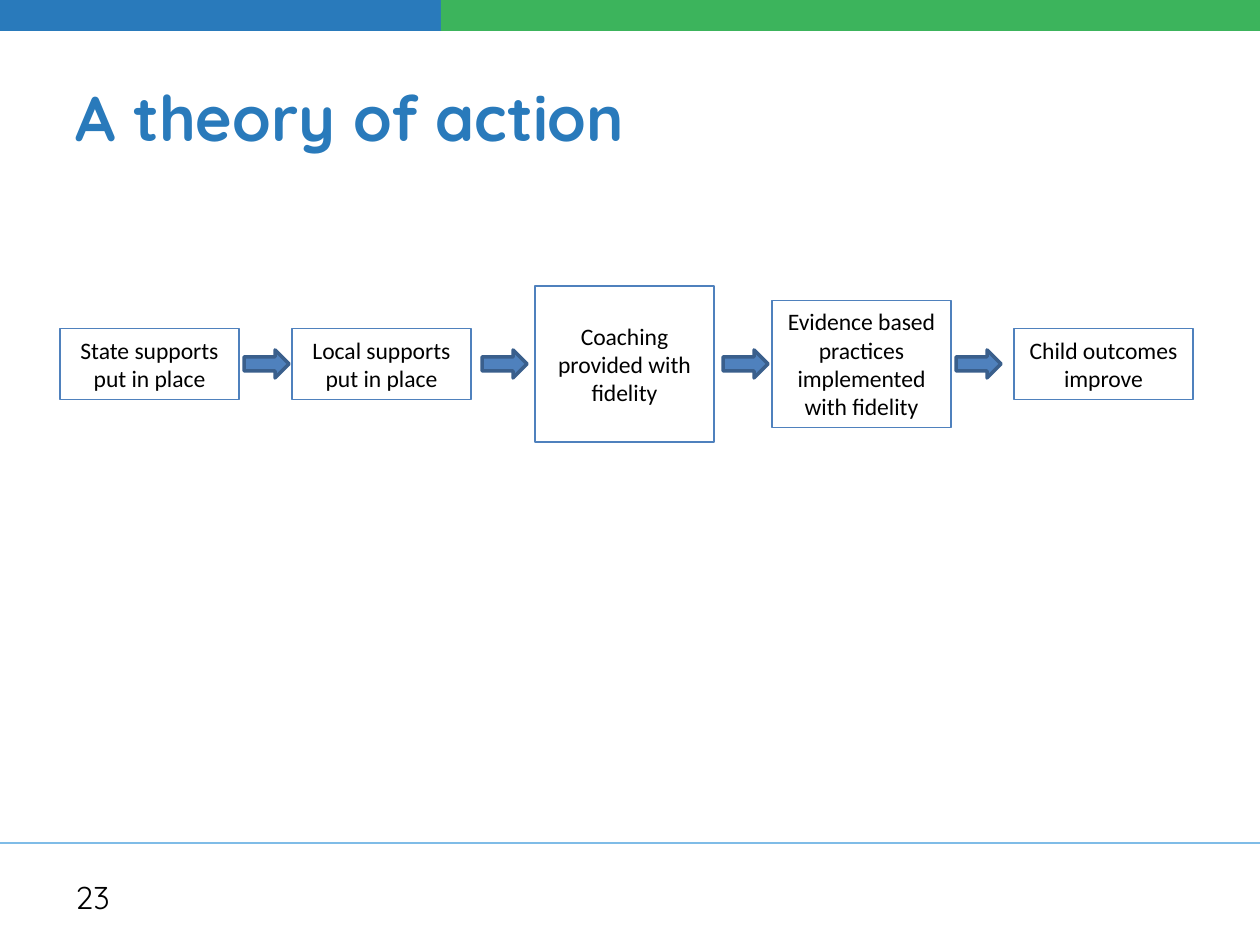
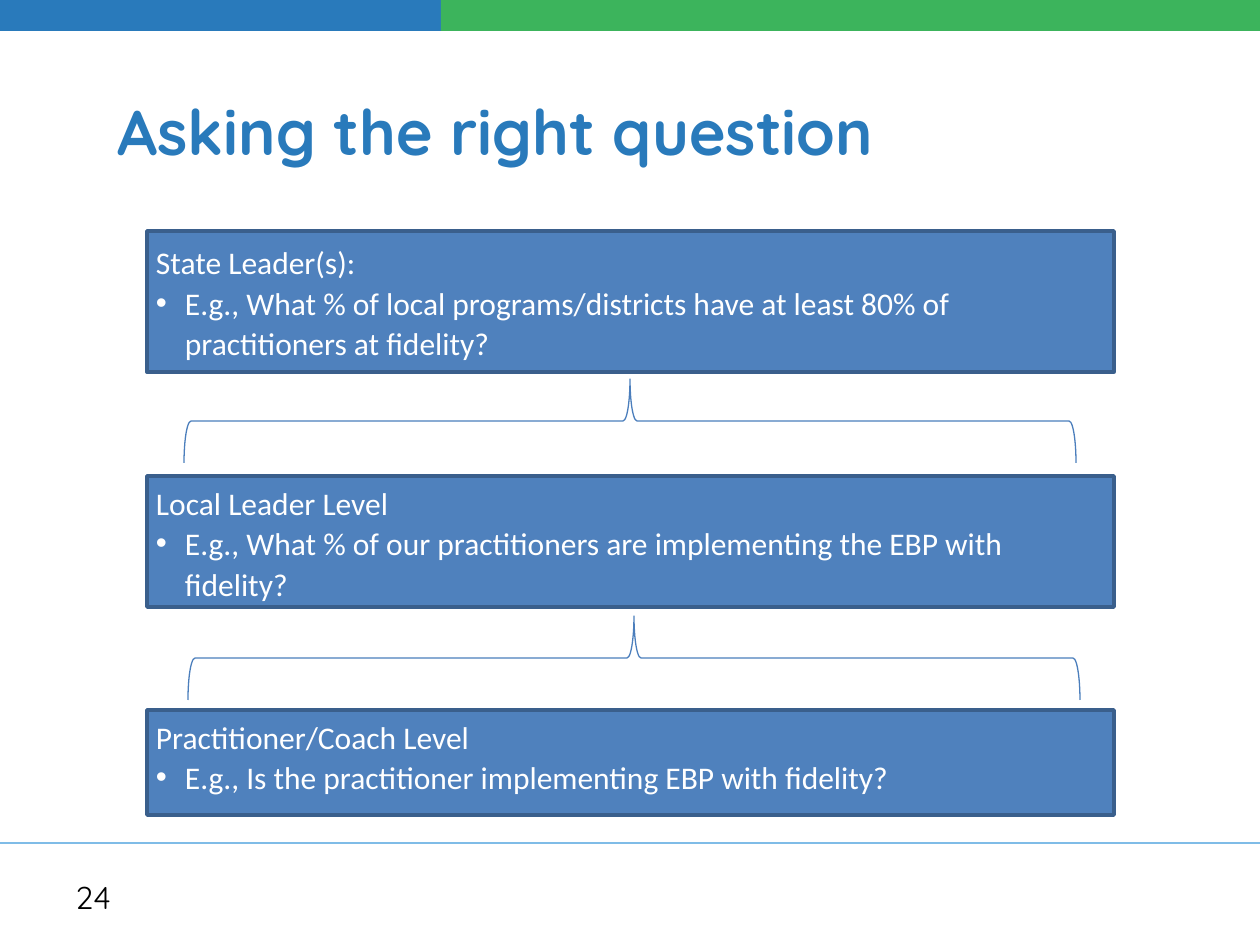
from lxml.etree import SubElement
from pptx import Presentation
from pptx.dml.color import RGBColor
from pptx.enum.shapes import MSO_CONNECTOR, MSO_SHAPE as SHAPE
from pptx.enum.text import MSO_ANCHOR as ANCHOR, PP_ALIGN as ALIGN
from pptx.oxml.ns import qn
from pptx.util import Pt

EMU_PER_PX = 914400 / 126
SLIDE_W, SLIDE_H = 1260, 945

BRAND_BLUE = RGBColor(0x29, 0x7A, 0xBB)
BRAND_GREEN = RGBColor(0x3C, 0xB4, 0x5C)
RULE_BLUE = RGBColor(0x7F, 0xBC, 0xE7)
BOX_BLUE = RGBColor(0x4F, 0x81, 0xBD)
EDGE_BLUE = RGBColor(0x3A, 0x5F, 0x8C)
BRACE_BLUE = RGBColor(0x4B, 0x7E, 0xBC)
BLACK = RGBColor(0, 0, 0)
WHITE = RGBColor(0xFF, 0xFF, 0xFF)

HEADING_FONT = "Quicksand"
BODY_FONT = "Calibri"

# Theory of action: left edge, height and wording of each step
STEPS = [
    (60, 71, "State supports put in place"),
    (292, 71, "Local supports put in place"),
    (535, 156, "Coaching provided with fidelity"),
    (772, 127, "Evidence based practices implemented with fidelity"),
    (1014, 71, "Child outcomes improve"),
]
STEP_W = 179
FLOW_Y = 364
ARROW_LEFTS = [244, 482, 723, 956]
ARROW_W, ARROW_H = 45, 28

# Questions: top, height, anchor, level and example
LEVELS = [
    (231, 141, ANCHOR.MIDDLE, "State Leader(s):",
     "E.g., What % of local programs/districts have at least 80% of "
     "practitioners at fidelity?"),
    (476, 131, ANCHOR.TOP, "Local Leader Level",
     "E.g., What % of our practitioners are implementing the EBP with fidelity?"),
    (710, 105, ANCHOR.TOP, "Practitioner/Coach Level",
     "E.g., Is the practitioner implementing EBP with fidelity?"),
]
LEVEL_X, LEVEL_W = 147, 967
BRACE_CENTERS = [(630, 421), (634, 658)]
BRACE_SPAN, BRACE_DEPTH = 892, 84
BULLET_INDENT = 29


def px(length):
    return round(length * EMU_PER_PX)


def add_box(slide, kind, left, top, width, height, fill=None, line=None, weight=0.75):
    box = slide.shapes.add_shape(kind, px(left), px(top), px(width), px(height))
    box.shadow.inherit = False
    if fill is None:
        box.fill.background()
    else:
        box.fill.solid()
        box.fill.fore_color.rgb = fill
    if line is None:
        box.line.fill.background()
    else:
        box.line.color.rgb = line
        box.line.width = Pt(weight)
    return box


def style_paragraph(paragraph, size, font, color, bold=False, align=ALIGN.LEFT):
    paragraph.alignment = align
    for run in paragraph.runs:
        run.font.size = Pt(size)
        run.font.name = font
        run.font.color.rgb = color
        run.font.bold = bold


def add_label(slide, text, left, top, width, height, size, color, bold=False):
    frame = slide.shapes.add_textbox(px(left), px(top), px(width), px(height)).text_frame
    frame.word_wrap = True
    frame.vertical_anchor = ANCHOR.MIDDLE
    frame.text = text
    style_paragraph(frame.paragraphs[0], size, HEADING_FONT, color, bold)


def add_bullet(paragraph):
    properties = paragraph._p.get_or_add_pPr()
    properties.set("marL", str(px(BULLET_INDENT)))
    properties.set("indent", str(-px(BULLET_INDENT)))
    SubElement(properties, qn("a:buFont"), typeface="Arial")
    SubElement(properties, qn("a:buChar"), char="•")


def add_page(deck, number, title, title_area):
    """Add a slide with the bands, rule, number and title that all slides share."""
    slide = deck.slides.add_slide(deck.slide_layouts[6])

    # Footer rule
    rule = slide.shapes.add_connector(
        MSO_CONNECTOR.STRAIGHT, 0, px(843), px(SLIDE_W), px(843))
    rule.line.color.rgb = RULE_BLUE
    rule.line.width = Pt(1.5)
    SubElement(rule._element.spPr, qn("a:effectLst"))

    # Top bands
    add_box(slide, SHAPE.RECTANGLE, 0, 0, 441, 31, BRAND_BLUE)
    add_box(slide, SHAPE.RECTANGLE, 441, 0, SLIDE_W - 441, 31, BRAND_GREEN)

    # Slide number and title
    add_label(slide, str(number), 63, 872, 294, 50, 18, BLACK)
    add_label(slide, title, *title_area, 36, BRAND_BLUE, bold=True)
    return slide


def add_step(slide, left, height, text):
    step = add_box(slide, SHAPE.RECTANGLE, left, FLOW_Y - height / 2,
                   STEP_W, height, line=BOX_BLUE)
    frame = step.text_frame
    frame.word_wrap = True
    frame.vertical_anchor = ANCHOR.MIDDLE
    frame.text = text
    style_paragraph(frame.paragraphs[0], 13.5, BODY_FONT, BLACK, align=ALIGN.CENTER)


def add_level(slide, top, height, anchor, level, example):
    panel = add_box(slide, SHAPE.FLOWCHART_PROCESS, LEVEL_X, top, LEVEL_W, height,
                    BOX_BLUE, EDGE_BLUE, 2)
    frame = panel.text_frame
    frame.word_wrap = True
    frame.vertical_anchor = anchor
    frame.margin_left = frame.margin_right = px(9)
    frame.margin_top = frame.margin_bottom = px(5)
    frame.text = f"{level}\n{example}"
    for paragraph in frame.paragraphs:
        paragraph.line_spacing = 1.07
        style_paragraph(paragraph, 18, BODY_FONT, WHITE)
    add_bullet(frame.paragraphs[1])


def add_brace(slide, center_x, center_y):
    brace = add_box(slide, SHAPE.LEFT_BRACE, center_x - BRACE_DEPTH / 2,
                    center_y - BRACE_SPAN / 2, BRACE_DEPTH, BRACE_SPAN,
                    line=BRACE_BLUE)
    brace.rotation = 90


def build_theory_of_action(deck):
    slide = add_page(deck, 23, "A theory of action", (63, 38, 1134, 157))
    for step in STEPS:
        add_step(slide, *step)
    for left in ARROW_LEFTS:
        add_box(slide, SHAPE.RIGHT_ARROW, left, FLOW_Y - ARROW_H / 2,
                ARROW_W, ARROW_H, BOX_BLUE, EDGE_BLUE, 2)


def build_right_question(deck):
    slide = add_page(deck, 24, "Asking the right question", (105, 40, 1086, 180))
    for level in LEVELS:
        add_level(slide, *level)
    for center in BRACE_CENTERS:
        add_brace(slide, *center)


def main():
    deck = Presentation()
    deck.slide_width, deck.slide_height = px(SLIDE_W), px(SLIDE_H)
    build_theory_of_action(deck)
    build_right_question(deck)
    deck.save("out.pptx")


if __name__ == "__main__":
    main()
